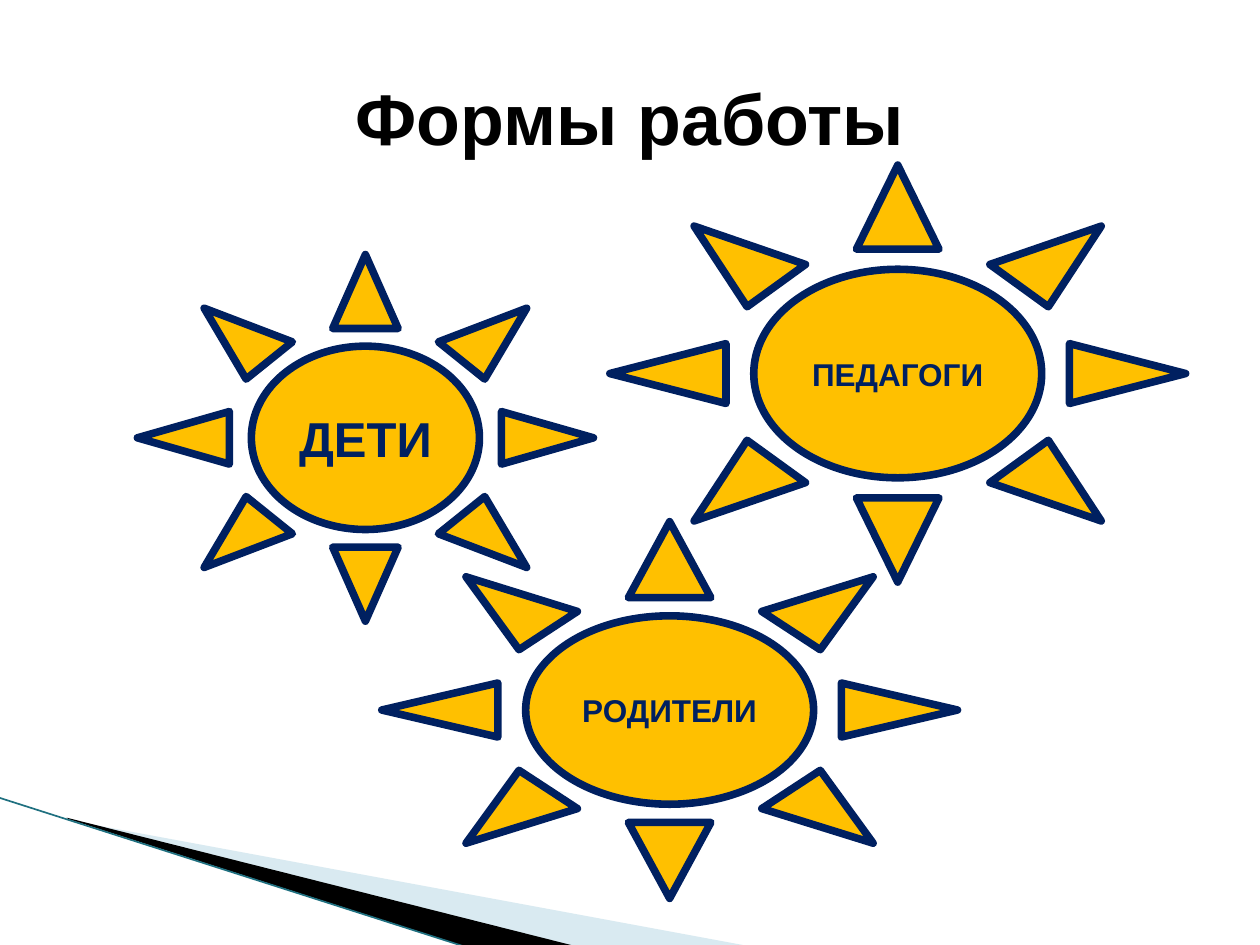
from dataclasses import dataclass

from lxml import etree
from pptx import Presentation
from pptx.dml.color import RGBColor
from pptx.enum.shapes import MSO_CONNECTOR, MSO_SHAPE
from pptx.enum.text import MSO_ANCHOR, PP_ALIGN
from pptx.oxml.ns import qn
from pptx.util import Inches, Pt

FONT = "Arial"
BLACK, NAVY, GOLD = "000000", "002060", "FFC000"
PALE_BLUE, TEAL = "A0CBDC", "1F7080"


@dataclass
class Sun:
    text: str
    left: float
    top: float
    width: float
    height: float
    size: int


@dataclass
class Wedge:
    points: list[tuple[float, float]]
    color: str
    opacity: int = 100


SUNS = [
    Sun("ДЕТИ", 1.09, 2.02, 3.62, 2.91, 28),
    Sun("ПЕДАГОГИ", 4.84, 1.31, 4.57, 3.31, 18),
    Sun("РОДИТЕЛИ", 3.03, 4.14, 4.57, 2.99, 18),
]
WEDGES = [
    Wedge([(0.55, 6.51), (5.95, 7.51), (4.56, 7.51), (0.55, 6.5)], PALE_BLUE, 40),
    Wedge([(0.53, 6.49), (4.57, 7.51), (3.72, 7.52), (0.54, 6.5)], BLACK),
]


def rgb(color: str) -> RGBColor:
    return RGBColor.from_string(color)


def set_text(shape, text: str, size: int, color: str) -> None:
    tf = shape.text_frame
    tf.text = text
    tf.word_wrap = True
    tf.vertical_anchor = MSO_ANCHOR.MIDDLE
    p = tf.paragraphs[0]
    p.alignment = PP_ALIGN.CENTER
    p.font.name, p.font.size, p.font.bold = FONT, Pt(size), True
    p.font.color.rgb = rgb(color)


def add_wedge(s, wedge: Wedge) -> None:
    points = [(Inches(x), Inches(y)) for x, y in wedge.points]
    builder = s.shapes.build_freeform(*points[0])
    builder.add_line_segments(points[1:])
    sp = builder.convert_to_shape()
    sp.shadow.inherit = False
    sp.line.fill.background()
    sp.fill.solid()
    sp.fill.fore_color.rgb = rgb(wedge.color)
    if wedge.opacity < 100:
        clr = sp.fill._xPr.find(".//" + qn("a:srgbClr"))
        etree.SubElement(clr, qn("a:alpha"), val=str(wedge.opacity * 1000))


def add_sun(s, sun: Sun) -> None:
    box = [Inches(v) for v in (sun.left, sun.top, sun.width, sun.height)]
    sp = s.shapes.add_shape(MSO_SHAPE.SUN, *box)
    sp.shadow.inherit = False
    sp.fill.solid()
    sp.fill.fore_color.rgb = rgb(GOLD)
    sp.line.color.rgb = rgb(NAVY)
    sp.line.width = Pt(4.33)
    etree.SubElement(sp.line._get_or_add_ln(), qn("a:round"))
    set_text(sp, sun.text, sun.size, NAVY)


def main() -> None:
    prs = Presentation()
    prs.slide_width, prs.slide_height = Inches(10), Inches(7.5)
    s = prs.slides.add_slide(prs.slide_layouts[5])

    # Corner decoration
    for wedge in WEDGES:
        add_wedge(s, wedge)
    edge = s.shapes.add_connector(
        MSO_CONNECTOR.STRAIGHT, Inches(-0.01), Inches(6.33), Inches(3.71), Inches(7.52)
    )
    edge.line.color.rgb = rgb(TEAL)
    edge.line.width = Pt(0.95)
    etree.SubElement(edge._element.spPr, qn("a:effectLst"))

    # Title
    title = s.shapes.title
    title.left, title.top = Inches(0.5), Inches(0.3)
    title.width, title.height = Inches(9), Inches(1.25)
    set_text(title, "Формы работы", 41, BLACK)

    # Suns
    for sun in SUNS:
        add_sun(s, sun)

    prs.save("out.pptx")


if __name__ == "__main__":
    main()
